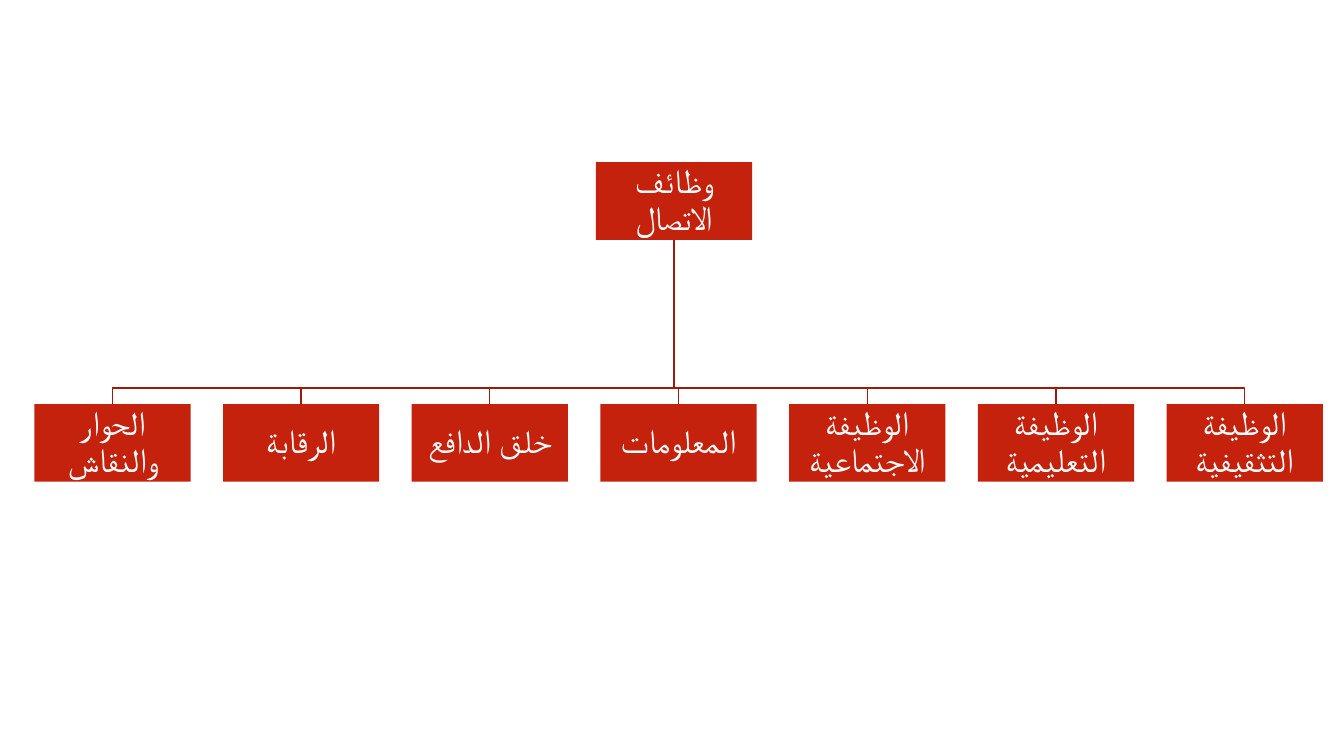
from pptx import Presentation
from pptx.dml.color import RGBColor
from pptx.enum.shapes import MSO_SHAPE as Shape
from pptx.enum.text import MSO_ANCHOR as Anchor, PP_ALIGN as Align
from pptx.util import Inches, Pt

WIDE, HIGH = 1.55, 0.77
ROOT_X, ROOT_Y = 5.91, 1.61
ROW_X, ROW_Y = 0.34, 4.01
STEP = (11.57 - ROW_X) / 6
BUS_Y = 3.85
ROOT = "وظائف الاتصال"
ROLES = [
    "الحوار والنقاش",
    "الرقابة",
    "خلق الدافع",
    "المعلومات",
    "الوظيفة الاجتماعية",
    "الوظيفة التعليمية",
    "الوظيفة التثقيفية",
]
FRAME = {
    "word_wrap": True,
    "vertical_anchor": Anchor.MIDDLE,
    "margin_left": Inches(0.02),
    "margin_right": Inches(0.02),
    "margin_top": Inches(0.02),
    "margin_bottom": Inches(0.02),
}
FONT = {"name": "TeX Gyre Adventor", "size": Pt(24)}


def color(text):
    return RGBColor.from_string(text)


def add_box(text, left, top):
    box = slide.shapes.add_shape(
        Shape.RECTANGLE, Inches(left), Inches(top), Inches(WIDE), Inches(HIGH))
    box.shadow.inherit = False
    box.fill.solid()
    box.fill.fore_color.rgb = color("C4220D")
    box.line.fill.background()
    frame = box.text_frame
    for key, value in FRAME.items():
        setattr(frame, key, value)
    para = frame.paragraphs[0]
    para.text = text
    para.alignment = Align.CENTER
    para.line_spacing = 0.9
    para._p.get_or_add_pPr().set("rtl", "1")
    font = para.runs[0].font
    for key, value in FONT.items():
        setattr(font, key, value)
    font.color.rgb = color("FFFFFF")


deck = Presentation()
deck.slide_width, deck.slide_height = Inches(13.33), Inches(7.5)
slide = deck.slides.add_slide(deck.slide_layouts[6])

# Branches from the root down to each role, behind the boxes
lefts = [ROW_X + i * STEP for i in range(len(ROLES))]
stem = ROOT_X + WIDE / 2
for left in reversed(lefts):
    mid = left + WIDE / 2
    path = slide.shapes.build_freeform(Inches(stem), Inches(ROOT_Y + HIGH))
    turns = [(stem, BUS_Y), (mid, BUS_Y), (mid, ROW_Y)]
    path.add_line_segments([(Inches(x), Inches(y)) for x, y in turns], close=False)
    branch = path.convert_to_shape()
    branch.shadow.inherit = False
    branch.fill.background()
    branch.line.color.rgb = color("9D1B0A")
    branch.line.width = Pt(1)

# Boxes
add_box(ROOT, ROOT_X, ROOT_Y)
for role, left in zip(ROLES, lefts):
    add_box(role, left, ROW_Y)

deck.save("out.pptx")
